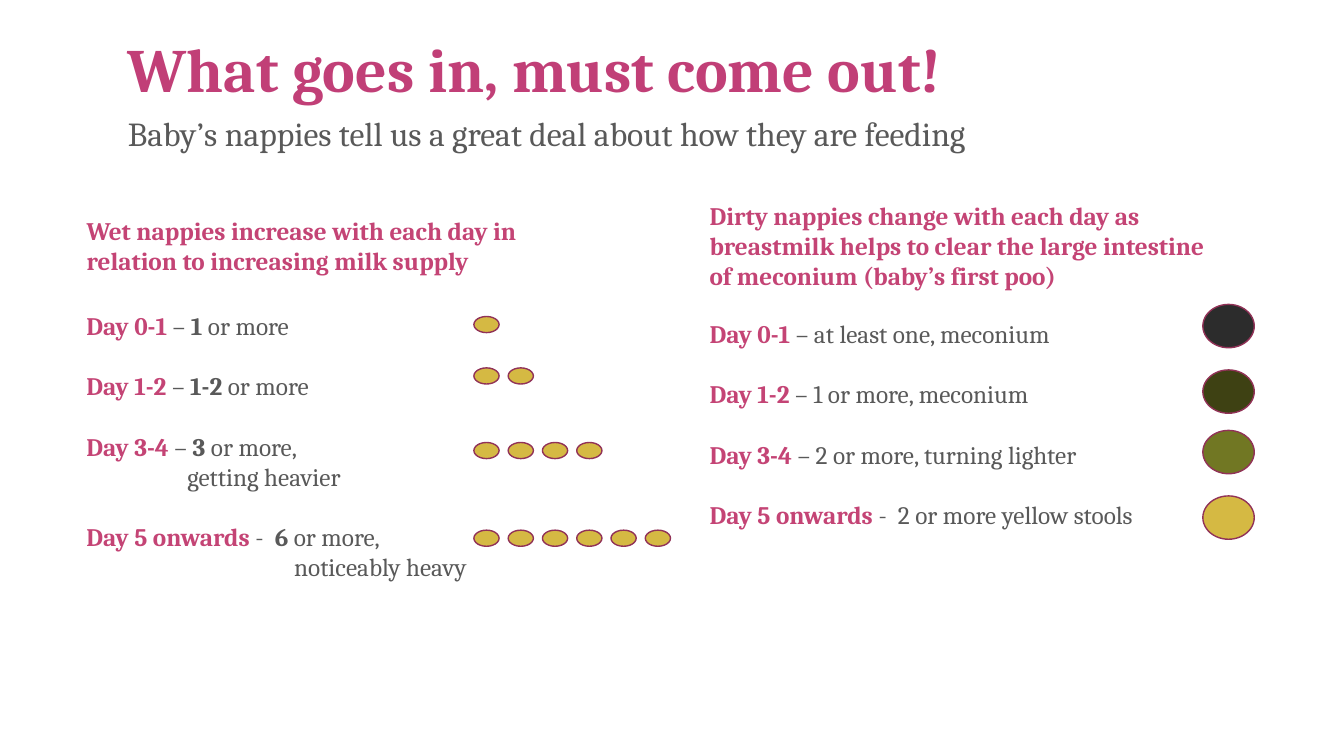
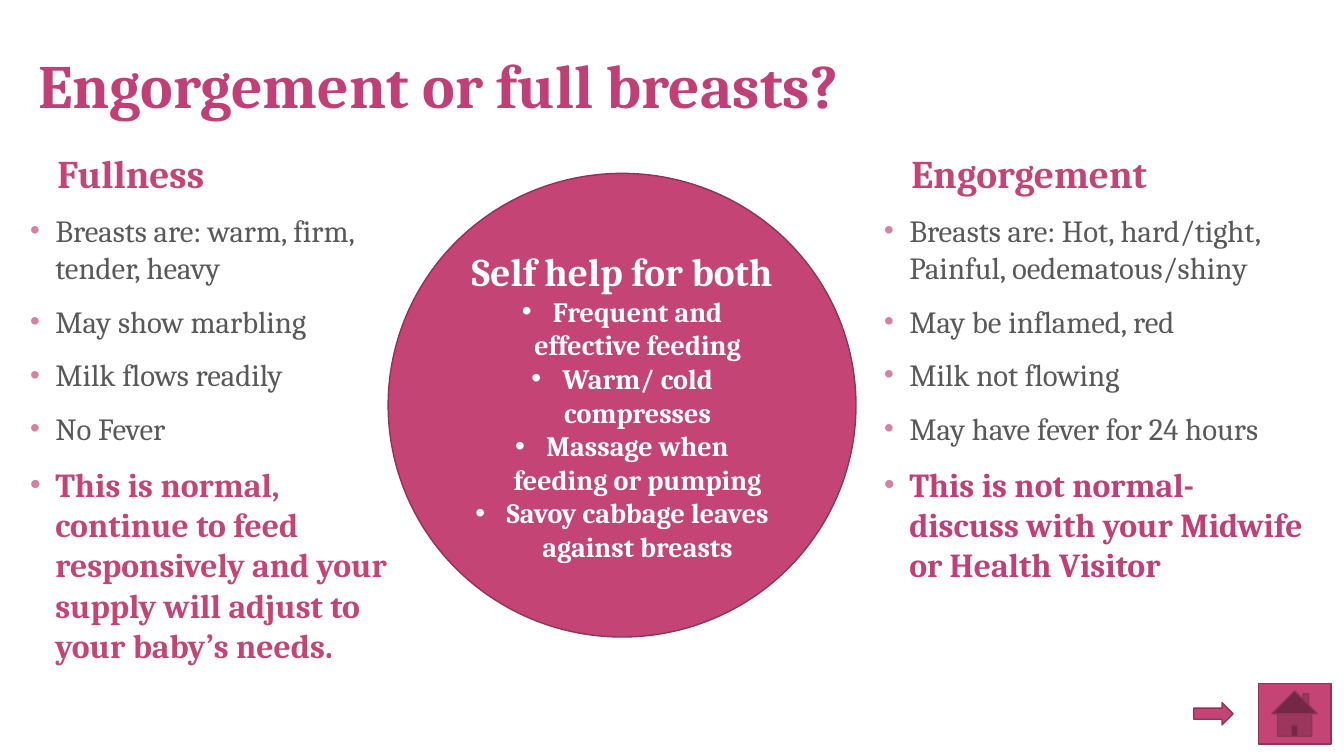
from dataclasses import dataclass

from lxml.etree import SubElement
from pptx import Presentation
from pptx.dml.color import RGBColor
from pptx.enum.shapes import MSO_SHAPE as Preset
from pptx.enum.text import MSO_ANCHOR as Anchor, PP_ALIGN as Align
from pptx.oxml.ns import qn
from pptx.util import Inches, Pt

FONT = "Cambria"
TITLE_PINK, PINK, OUTLINE, BULLET_PINK = "C13F77", "C44475", "913257", "D680A5"
GREY, WHITE, YELLOW = "595959", "FFFFFF", "D5B943"
BLANK_LINE = 21.5


@dataclass
class Run:
    """A stretch of text in one style."""
    text: str
    color: str = GREY
    bold: bool = False


@dataclass
class Para:
    """A paragraph with its spacing, indent and bullet."""
    runs: list
    size: float = 18
    before: float = 0
    line: float = 1.0
    align: Align = Align.LEFT
    indent: float = 0
    bullet: str = ""
    bullet_percent: int = 100


def rgb(value):
    """Turn a hex string into a colour."""
    return RGBColor.from_string(value)


def inches(box):
    """Turn left, top, width and height into lengths."""
    return [Inches(value) for value in box]


def set_indent(paragraph, item):
    """Indent a paragraph and hang its bullet."""
    properties = paragraph._p.get_or_add_pPr()
    properties.set("marL", str(Inches(item.indent)))
    if not item.bullet:
        return
    properties.set("indent", str(-Inches(item.indent)))
    color = SubElement(properties, qn("a:buClr"))
    SubElement(color, qn("a:srgbClr"), val=item.bullet)
    SubElement(properties, qn("a:buSzPct"), val=str(item.bullet_percent * 1000))
    SubElement(properties, qn("a:buFont"), typeface="Arial")
    SubElement(properties, qn("a:buChar"), char="•")


def write(shape, items, anchor=Anchor.TOP):
    """Fill a shape with paragraphs."""
    frame = shape.text_frame
    frame.word_wrap = True
    frame.vertical_anchor = anchor
    for index, item in enumerate(items):
        paragraph = frame.add_paragraph() if index else frame.paragraphs[0]
        set_indent(paragraph, item)
        formats = {"alignment": item.align, "line_spacing": item.line,
                   "space_before": Pt(item.before if index else 0)}
        for name, value in formats.items():
            setattr(paragraph, name, value)
        for part in item.runs:
            run = paragraph.add_run()
            run.text = part.text
            for name, value in {"name": FONT, "size": Pt(item.size), "bold": part.bold}.items():
                setattr(run.font, name, value)
            run.font.color.rgb = rgb(part.color)


def add_text(slide, box, items, anchor=Anchor.TOP):
    """Place a text box."""
    write(slide.shapes.add_textbox(*inches(box)), items, anchor)


def add_shape(slide, preset, box, fill=PINK):
    """Place a filled shape with the shared outline."""
    shape = slide.shapes.add_shape(preset, *inches(box))
    shape.shadow.inherit = False
    shape.fill.solid()
    shape.fill.fore_color.rgb = rgb(fill)
    shape.line.color.rgb = rgb(OUTLINE)
    shape.line.width = Pt(1)
    return shape


def add_title(slide, box, text):
    """Place a slide title."""
    add_text(slide, box, [Para([Run(text, TITLE_PINK, True)], 44, line=0.9)], Anchor.BOTTOM)


def add_heading(slide, box, text, size=18, line=1.0):
    """Place a column heading."""
    add_text(slide, box, [Para([Run(text, PINK, True)], size, line=line)], Anchor.MIDDLE)


def add_wet_nappies(slide, left, top):
    """Place the wet nappy column with one dot per nappy."""
    add_heading(slide, (left, top, 5.25, 0.81),
                "Wet nappies increase with each day in relation to increasing milk supply")
    days = [("Day 0-1 ", "– ", "1", " or more", "", 0, 1.11, 1),
            ("Day 1-2 ", "– ", "1-2", " or more", "", 0, 1.62, 2),
            ("Day 3-4 ", "– ", "3", " or more,", "getting heavier", 1, 2.36, 4),
            ("Day 5 onwards ", "-  ", "6 ", "or more,", "noticeably heavy", 2.06, 3.23, 6)]
    items = []
    for day, dash, count, rest, more, indent, dot_top, dots in days:
        items.append(Para([Run(day, PINK, True), Run(dash), Run(count, bold=True), Run(rest)],
                          before=BLANK_LINE))
        if more:
            items.append(Para([Run(more)], indent=indent))
        for index in range(dots):
            box = (left + 3.94 + index * 0.34, top + dot_top, 0.25, 0.16)
            add_shape(slide, Preset.FLOWCHART_CONNECTOR, box, YELLOW)
    add_text(slide, (left, top + 1, 6.16, 2.83), items)


def add_dirty_nappies(slide, left, top):
    """Place the dirty nappy column with a colour sample for each day."""
    add_heading(slide, (left, top, 5.16, 0.81),
                "Dirty nappies change with each day as breastmilk helps to clear "
                "the large intestine of meconium (baby’s first poo)")
    days = [("Day 0-1 ", "– at least one, meconium", "2C2C2C", 0.99),
            ("Day 1-2 ", "– 1 or more, meconium", "3E4113", 1.64),
            ("Day 3-4 ", "– 2 or more, turning lighter", "717723", 2.24),
            ("Day 5 onwards ", "-  2 or more yellow stools", YELLOW, 2.89)]
    add_text(slide, (left, top + 1.08, 5.24, 2.22),
             [Para([Run(day, PINK, True), Run(text)], before=BLANK_LINE)
              for day, text, *_ in days])
    for *_, color, sample_top in days:
        add_shape(slide, Preset.FLOWCHART_CONNECTOR,
                  (left + 4.99, top + sample_top, 0.51, 0.43), color)


def add_symptoms(slide, box, heading, signs, advice, advice_color):
    """Place a heading above a bulleted list that ends in advice."""
    left, top, width, height = box
    add_heading(slide, (left + 0.27, top, 3.3, 0.81), heading, 28, 0.9)
    rows = [(Run(sign), 22) for sign in signs] + [(Run(advice, advice_color, True), 24)]
    add_text(slide, (left, top + 0.71, width, height - 0.71),
             [Para([run], size, before=12, indent=0.25, bullet=BULLET_PINK, bullet_percent=90)
              for run, size in rows])


def add_self_help(slide, box):
    """Place the circle of advice for both conditions."""
    tips = ["Frequent and effective feeding", "Warm/ cold compresses",
            "Massage when feeding or pumping", "Savoy cabbage leaves against breasts"]
    items = [Para([Run("Self help for both", WHITE, True)], 28, align=Align.CENTER)]
    items += [Para([Run(tip, WHITE, True)], 20, align=Align.CENTER, indent=0.31, bullet=WHITE)
              for tip in tips]
    write(add_shape(slide, Preset.OVAL, box), items, Anchor.MIDDLE)


def add_navigation(slide, left, top):
    """Place the next arrow and the home button."""
    add_shape(slide, Preset.ACTION_BUTTON_HOME, (left + 0.64, top, 0.72, 0.6))
    add_shape(slide, Preset.RIGHT_ARROW, (left, top + 0.19, 0.39, 0.22))


def build_nappies(slide):
    """Build the slide on nappies."""
    add_title(slide, (1.17, 0.12, 11, 0.98), "What goes in, must come out!")
    add_text(slide, (1.17, 1.07, 10.7, 0.5),
             [Para([Run("Baby’s nappies tell us a great deal about how they are feeding")], 24)])
    add_wet_nappies(slide, 0.76, 2.03)
    add_dirty_nappies(slide, 6.94, 2.03)


def build_engorgement(slide):
    """Build the slide that compares fullness and engorgement."""
    add_title(slide, (0.28, 0.5, 11.89, 0.76), "Engorgement or full breasts?")
    add_symptoms(slide, (8.67, 1.34, 4.4, 4.67), "Engorgement",
                 ["Breasts are: Hot, hard/tight, Painful, oedematous/shiny",
                  "May be inflamed, red", "Milk not flowing", "May have fever for 24 hours"],
                 "This is not normal- discuss with your Midwife or Health Visitor", TITLE_PINK)
    add_symptoms(slide, (0.2, 1.34, 4.05, 5.59), "Fullness",
                 ["Breasts are: warm, firm, tender, heavy", "May show marbling",
                  "Milk flows readily", "No Fever"],
                 "This is normal, continue to feed responsively and your supply "
                 "will adjust to your baby’s needs.", PINK)
    add_self_help(slide, (3.85, 1.72, 4.64, 4.6))
    add_navigation(slide, 11.84, 6.78)


def main():
    """Build and save the presentation."""
    presentation = Presentation()
    presentation.slide_width = Inches(13.33)
    presentation.slide_height = Inches(7.5)
    for build in (build_nappies, build_engorgement):
        build(presentation.slides.add_slide(presentation.slide_layouts[6]))
    presentation.save("out.pptx")


if __name__ == "__main__":
    main()
